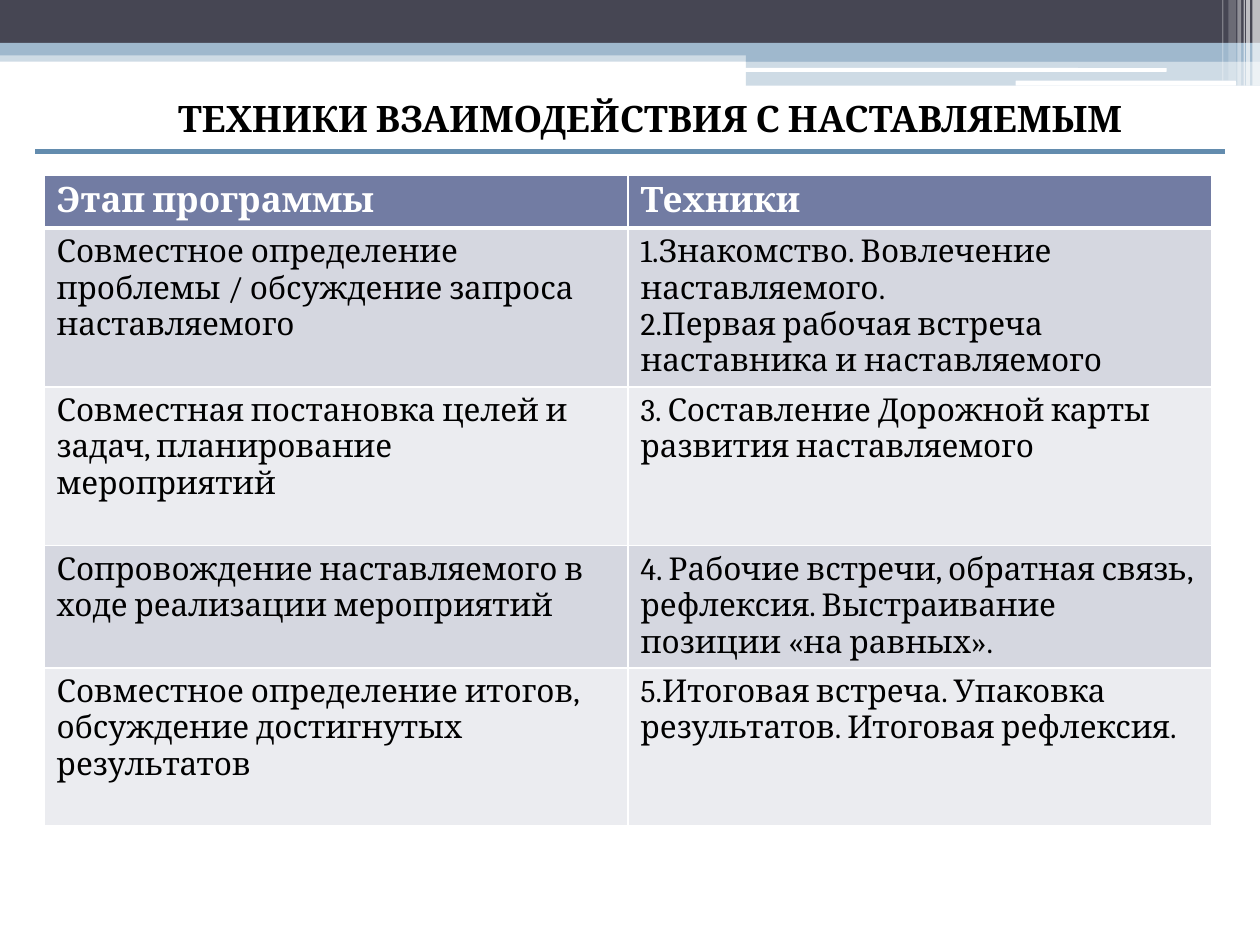
from dataclasses import dataclass

from lxml.etree import SubElement
from pptx import Presentation
from pptx.dml.color import RGBColor
from pptx.enum.shapes import MSO_CONNECTOR as Link, MSO_SHAPE as Kind
from pptx.enum.text import MSO_ANCHOR as Anchor, PP_ALIGN as Align
from pptx.oxml.ns import qn
from pptx.slide import Slide
from pptx.table import _Cell as Cell
from pptx.text.text import _Paragraph as Para, _Run as Run
from pptx.util import Inches, Pt

FONT = "Cambria"
WHITE, BLACK, DARK, BLUE = "FFFFFF", "000000", "464653", "9FB8CD"
RULE, HEAD = "638CAE", "727CA3"
BANDS = ("D5D7E0", "EBECF0")


@dataclass
class Bar:
    left: float
    top: float
    width: float
    height: float
    color: str
    alpha: int = 100
    kind: Kind = Kind.RECTANGLE


@dataclass
class Row:
    height: float
    stage: list[str]
    steps: list[str]


BARS = [
    Bar(0, 0.4, 10, 0.09, BLUE, 50),
    Bar(0, 0, 10, 0.34, DARK),
    Bar(0, 0.34, 10, 0.1, BLUE),
    Bar(5.92, 0.39, 4.08, 0.1, BLUE),
    Bar(5.92, 0.48, 4.08, 0.2, BLUE, 50),
    Bar(5.91, 0.54, 3.35, 0.03, WHITE, kind=Kind.ROUNDED_RECTANGLE),
    Bar(8.06, 0.64, 1.75, 0.04, WHITE, kind=Kind.ROUNDED_RECTANGLE),
    Bar(9.94, 0, 0.06, 0.68, WHITE, 65),
    Bar(9.89, 0, 0.03, 0.68, WHITE, 65),
    Bar(9.87, 0, 0.01, 0.68, WHITE, 60),
    Bar(9.82, 0, 0.03, 0.68, WHITE, 40),
    Bar(9.75, 0, 0.06, 0.64, WHITE, 20),
    Bar(9.7, 0, 0.01, 0.64, WHITE, 30),
]

ROWS = [
    Row(0.41, ["Этап программы"], ["Техники"]),
    Row(1.26, ["Совместное определение проблемы / обсуждение запроса наставляемого"],
        ["1.Знакомство. Вовлечение наставляемого.",
         "2.Первая рабочая встреча наставника и наставляемого"]),
    Row(1.26, ["Совместная постановка целей и задач, планирование мероприятий"],
        ["3. Составление Дорожной карты развития наставляемого"]),
    Row(0.97, ["Сопровождение наставляемого в ходе реализации мероприятий"],
        ["4. Рабочие встречи, обратная связь, рефлексия. "
         "Выстраивание позиции «на равных»."]),
    Row(1.25, ["Совместное определение итогов, обсуждение достигнутых результатов"],
        ["5.Итоговая встреча. Упаковка результатов. Итоговая рефлексия."]),
]


def paint(target, color: str) -> None:
    target.solid()
    target.fore_color.rgb = RGBColor.from_string(color)


def add_run(para: Para, text: str, size: int, color: str, bold: bool) -> Run:
    run = para.add_run()
    run.text = text
    run.font.name = FONT
    run.font.size = Pt(size)
    run.font.bold = bold
    paint(run.font.fill, color)
    return run


def draw_bar(slide: Slide, bar: Bar) -> None:
    shape = slide.shapes.add_shape(
        bar.kind, Inches(bar.left), Inches(bar.top),
        Inches(bar.width), Inches(bar.height))
    shape.shadow.inherit = False
    shape.line.fill.background()
    paint(shape.fill, bar.color)
    if bar.alpha < 100:
        tone = shape.fill._xPr.find(qn("a:solidFill"))[0]
        SubElement(tone, qn("a:alpha"), val=str(bar.alpha * 1000))


def draw_edges(cell: Cell, base: int) -> None:
    props = cell._tc.get_or_add_tcPr()
    for spot, side in enumerate("LRTB"):
        width = base if side == "B" else 1
        edge = props.makeelement(qn(f"a:ln{side}"), {"w": str(Pt(width))})
        tone = SubElement(edge, qn("a:solidFill"))
        SubElement(tone, qn("a:srgbClr"), val=WHITE)
        props.insert(spot, edge)


def fill_cell(cell: Cell, lines: list[str], color: str, head: bool) -> None:
    paint(cell.fill, color)
    draw_edges(cell, 3 if head else 1)
    frame = cell.text_frame
    for spot, line in enumerate(lines):
        para = frame.add_paragraph() if spot else frame.paragraphs[0]
        add_run(para, line, 20 if head else 18, WHITE if head else BLACK, head)


def draw_table(slide: Slide, rows: list[Row]) -> None:
    total = sum(row.height for row in rows)
    table = slide.shapes.add_table(
        len(rows), 2, Inches(0.35), Inches(1.39),
        Inches(9.27), Inches(total)).table
    for spot, row in enumerate(rows):
        table.rows[spot].height = Inches(row.height)
        head = spot == 0
        color = HEAD if head else BANDS[(spot - 1) % 2]
        for col, lines in enumerate((row.stage, row.steps)):
            fill_cell(table.cell(spot, col), lines, color, head)


def draw_title(slide: Slide, text: str) -> None:
    box = slide.shapes.add_textbox(
        Inches(0.66), Inches(0.61), Inches(9), Inches(0.59))
    frame = box.text_frame
    frame.word_wrap = True
    frame.vertical_anchor = Anchor.MIDDLE
    para = frame.paragraphs[0]
    para.alignment = Align.CENTER
    run = add_run(para, text, 26, BLACK, True)
    run._r.get_or_add_rPr().set("cap", "small")


def draw_rule(slide: Slide) -> None:
    rule = slide.shapes.add_connector(
        Link.STRAIGHT, Inches(0.28), Inches(1.2), Inches(9.72), Inches(1.2))
    paint(rule.line.fill, RULE)
    rule.line.width = Pt(3)
    SubElement(rule._element.spPr, qn("a:effectLst"))


def main() -> None:
    deck = Presentation()
    deck.slide_width, deck.slide_height = Inches(10), Inches(7.5)
    slide = deck.slides.add_slide(deck.slide_layouts[6])
    for bar in BARS:
        draw_bar(slide, bar)
    draw_table(slide, ROWS)
    draw_title(slide, "техники взаимодействия с наставляемым")
    draw_rule(slide)
    deck.save("out.pptx")


if __name__ == "__main__":
    main()
